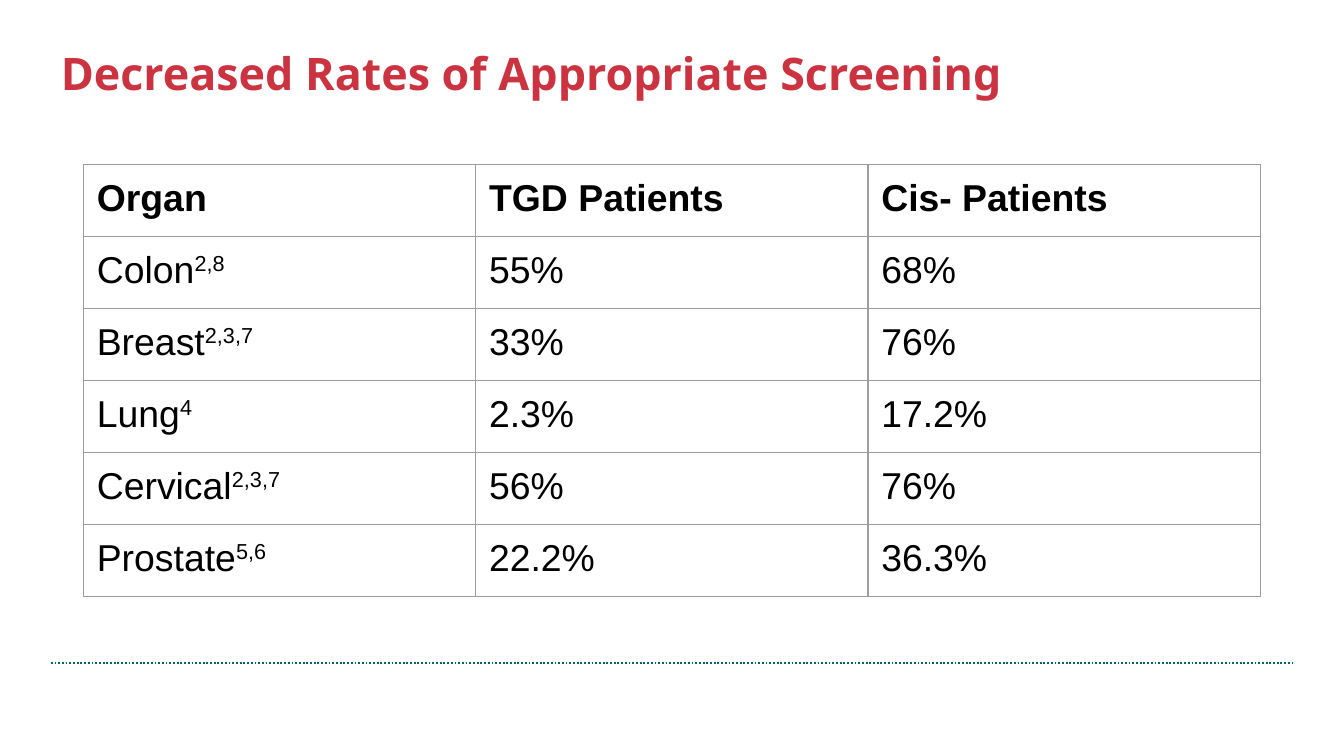
from dataclasses import dataclass

import lxml.etree
import pptx
import pptx.dml.color
import pptx.enum.dml
import pptx.enum.shapes
import pptx.enum.text
import pptx.oxml.ns
import pptx.util
from pptx.util import Cm


@dataclass(frozen=True)
class Theme:
    title: str = "CB3340"
    text: str = "000000"
    rule: str = "006375"
    border: str = "9E9E9E"
    title_font: str = "Noto Sans"
    body_font: str = "Arial"
    title_size: int = 24
    body_size: int = 20
    rule_width: float = 1
    border_width: float = 0.75


THEME = Theme()
HEADERS = ("Organ", "TGD Patients", "Cis- Patients")
SCREENING = (
    ("Colon", "2,8", "55%", "68%"),
    ("Breast", "2,3,7", "33%", "76%"),
    ("Lung", "4", "2.3%", "17.2%"),
    ("Cervical", "2,3,7", "56%", "76%"),
    ("Prostate", "5,6", "22.2%", "36.3%"),
)


def rgb(value):
    return pptx.dml.color.RGBColor.from_string(value)


def add_run(p, text, font, size, color, bold=False, superscript=False):
    r = p.add_run()
    r.text = text
    r.font.name = font
    r.font.size = pptx.util.Pt(size)
    r.font.bold = bold
    r.font.color.rgb = rgb(color)
    if superscript:
        r.font._element.set("baseline", "30000")


def add_rule(s, x, y, width):
    line = s.shapes.add_connector(
        pptx.enum.shapes.MSO_CONNECTOR.STRAIGHT, x, y, x + width, y)
    line.line.color.rgb = rgb(THEME.rule)
    line.line.width = pptx.util.Pt(THEME.rule_width)
    line.line.dash_style = pptx.enum.dml.MSO_LINE.ROUND_DOT
    lxml.etree.SubElement(line._element.spPr, pptx.oxml.ns.qn("a:effectLst"))


def fill_title(s, text, x, y, width, height):
    sp = s.shapes.title
    sp.left, sp.top, sp.width, sp.height = x, y, width, height
    tf = sp.text_frame
    tf.word_wrap = True
    tf.auto_size = pptx.enum.text.MSO_AUTO_SIZE.NONE
    tf.vertical_anchor = pptx.enum.text.MSO_ANCHOR.MIDDLE
    tf.margin_left = tf.margin_right = Cm(0.19)
    tf.margin_top = tf.margin_bottom = Cm(0.1)
    p = tf.paragraphs[0]
    p.alignment = pptx.enum.text.PP_ALIGN.LEFT
    p.line_spacing = 0.9
    add_run(p, text, THEME.title_font, THEME.title_size, THEME.title, bold=True)


def set_borders(cell):
    qn = pptx.oxml.ns.qn
    tcPr = cell._tc.get_or_add_tcPr()
    for i, side in enumerate(("lnL", "lnR", "lnT", "lnB")):
        ln = lxml.etree.Element(
            qn(f"a:{side}"), w=str(pptx.util.Pt(THEME.border_width)))
        fill = lxml.etree.SubElement(ln, qn("a:solidFill"))
        lxml.etree.SubElement(fill, qn("a:srgbClr"), val=THEME.border)
        tcPr.insert(i, ln)


def fill_cell(cell, text, note="", bold=False):
    cell.fill.background()
    set_borders(cell)
    cell.margin_left = cell.margin_right = Cm(0.25)
    cell.margin_top = cell.margin_bottom = Cm(0.25)
    p = cell.text_frame.paragraphs[0]
    style = (THEME.body_font, THEME.body_size, THEME.text)
    add_run(p, text, *style, bold=bold)
    if note:
        add_run(p, note, *style, superscript=True)


def add_screening_table(s, x, y, width, height):
    table = s.shapes.add_table(
        len(SCREENING) + 1, len(HEADERS), x, y, width, height).table
    table.first_row = False
    table.horz_banding = False
    for col, header in enumerate(HEADERS):
        fill_cell(table.cell(0, col), header, bold=True)
    for row, (organ, note, tgd, cis) in enumerate(SCREENING, 1):
        fill_cell(table.cell(row, 0), organ, note)
        fill_cell(table.cell(row, 1), tgd)
        fill_cell(table.cell(row, 2), cis)


def add_table_slide(prs, x, y, width, height):
    s = prs.slides.add_slide(prs.slide_layouts[5])
    margin = Cm(0.96)
    inner = width - 2 * margin
    add_rule(s, x + margin, y + Cm(12.52), inner)
    fill_title(s, "Decreased Rates of Appropriate Screening",
               x + margin, y + Cm(0.58), inner, Cm(1.7))
    inset = Cm(1.58)
    add_screening_table(s, x + inset, y + Cm(3.1), width - 2 * inset, Cm(8.16))


def main():
    prs = pptx.Presentation()
    prs.slide_width, prs.slide_height = Cm(25.4), Cm(14.28)
    add_table_slide(prs, 0, 0, prs.slide_width, prs.slide_height)
    prs.save("out.pptx")


if __name__ == "__main__":
    main()
